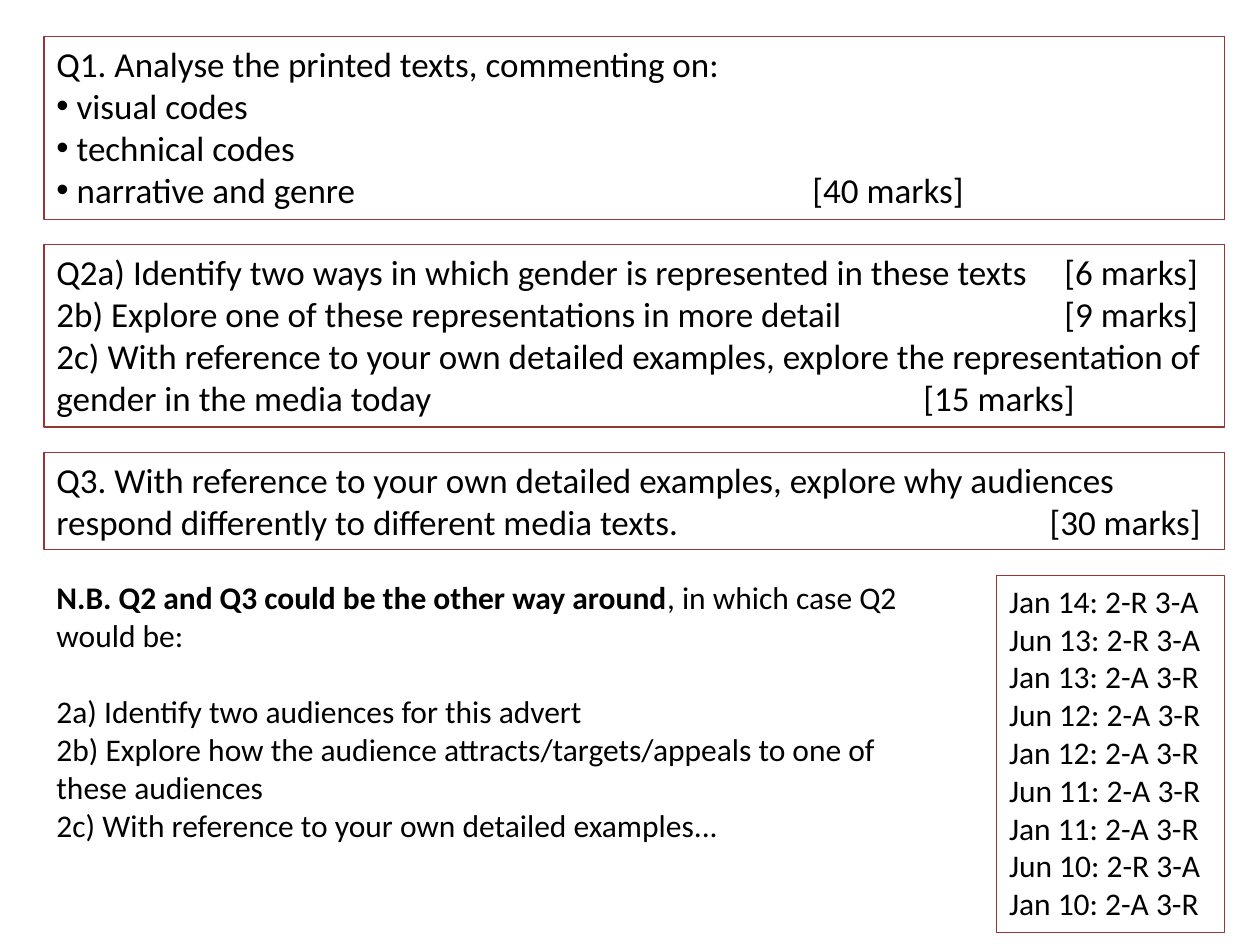
"""Build a slide of exam questions with marks and past paper pattern."""
import lxml.etree
import pptx
import pptx.dml.color
import pptx.enum.shapes
import pptx.enum.text
import pptx.oxml.ns
import pptx.util

Pt = pptx.util.Pt
qn = pptx.oxml.ns.qn
BLACK = pptx.dml.color.RGBColor(0x00, 0x00, 0x00)
DARK_RED = pptx.dml.color.RGBColor(0x95, 0x37, 0x35)

LEFT, WIDTH, GAP = 25.2, 674.6, 14.4
FIRST_TOP = 20.9
QUESTIONS = [
    (104.4, [
        {"runs": ["Q1. Analyse the printed texts, commenting on:"]},
        {"runs": [" visual codes"], "bullet": True},
        {"runs": [" technical codes"], "bullet": True},
        {"runs": [" narrative and genre\t[40 marks]"], "bullet": True, "tab": 432},
    ]),
    (104.4, [
        {"runs": ["Q2a) Identify two ways in which gender is represented in these texts\t[6 marks]"],
         "tab": 576},
        {"runs": ["2b) Explore one of these representations in more detail\t[9 marks]"], "tab": 576},
        {"runs": ["2c) With reference to your own detailed examples, explore the representation of "
                  "gender in the media today\t[15 marks]"], "tab": 495.4},
    ]),
    (55.4, [
        {"runs": ["Q3. With reference to your own detailed examples, explore why audiences respond "
                  "differently to different media texts.\t[30 marks]"], "tab": 567.5},
    ]),
]
NOTE = [
    {"runs": ["N.B. Q2 and Q3 could be the other way around", ", in which case Q2 would be:"],
     "bold_first": True, "space_after": 22},
    {"runs": ["2a) Identify two audiences for this advert"]},
    {"runs": ["2b) Explore how the audience attracts/targets/appeals to one of these audiences"]},
    {"runs": ["2c) With reference to your own detailed examples..."]},
]
PAST_PAPERS = [
    ("Jan 14", "2-R 3-A"), ("Jun 13", "2-R 3-A"), ("Jan 13", "2-A 3-R"),
    ("Jun 12", "2-A 3-R"), ("Jan 12", "2-A 3-R"), ("Jun 11", "2-A 3-R"),
    ("Jan 11", "2-A 3-R"), ("Jun 10", "2-R 3-A"), ("Jan 10", "2-A 3-R"),
]


class SlideBuilder:
    """Hold the text style and the current slide."""

    font = "Calibri"

    def __init__(self, slide):
        self.slide = slide

    def framed_box(self, left, top, width, height, paragraphs, size):
        """Add an outlined rectangle with text."""
        shape = self.slide.shapes.add_shape(
            pptx.enum.shapes.MSO_SHAPE.RECTANGLE, Pt(left), Pt(top), Pt(width), Pt(height))
        shape.shadow.inherit = False
        shape.fill.background()
        shape.line.color.rgb = DARK_RED
        shape.line.width = Pt(0.75)
        self.fill_text(shape, paragraphs, size)

    def text_box(self, left, top, width, height, paragraphs, size):
        """Add a plain text box."""
        shape = self.slide.shapes.add_textbox(Pt(left), Pt(top), Pt(width), Pt(height))
        self.fill_text(shape, paragraphs, size)

    def fill_text(self, shape, paragraphs, size):
        """Fill a shape with paragraphs."""
        frame = shape.text_frame
        frame.word_wrap = True
        frame.auto_size = pptx.enum.text.MSO_AUTO_SIZE.SHAPE_TO_FIT_TEXT
        frame.vertical_anchor = pptx.enum.text.MSO_ANCHOR.TOP
        for index, content in enumerate(paragraphs):
            paragraph = frame.add_paragraph() if index else frame.paragraphs[0]
            self.format_paragraph(paragraph, content)
            for position, text in enumerate(content["runs"]):
                run = paragraph.add_run()
                run.text = text
                run.font.name = self.font
                run.font.size = Pt(size)
                run.font.color.rgb = BLACK
                run.font.bold = position == 0 and content.get("bold_first", False)

    def format_paragraph(self, paragraph, content):
        """Set alignment, spacing, bullet and tab stop."""
        paragraph.alignment = pptx.enum.text.PP_ALIGN.LEFT
        paragraph.space_after = Pt(content.get("space_after", 0))
        properties = paragraph._p.get_or_add_pPr()
        if content.get("bullet"):
            lxml.etree.SubElement(properties, qn("a:buFont"), typeface="Arial")
            lxml.etree.SubElement(properties, qn("a:buChar"), char="•")
        if "tab" in content:
            tabs = lxml.etree.SubElement(properties, qn("a:tabLst"))
            lxml.etree.SubElement(tabs, qn("a:tab"), pos=str(Pt(content["tab"])), algn="l")


def main():
    """Build and save the presentation."""
    presentation = pptx.Presentation()
    presentation.slide_width = Pt(720)
    presentation.slide_height = Pt(540)
    builder = SlideBuilder(presentation.slides.add_slide(presentation.slide_layouts[6]))

    top = FIRST_TOP
    for height, paragraphs in QUESTIONS:
        builder.framed_box(LEFT, top, WIDTH, height, paragraphs, 20)
        top += height + GAP

    builder.text_box(LEFT, 326.9, 521.3, 159.8, NOTE, 18)
    papers = [{"runs": [f"{session}: {pattern}"]} for session, pattern in PAST_PAPERS]
    builder.framed_box(569.5, 329, 130.3, 203.8, papers, 18)
    presentation.save("out.pptx")


if __name__ == "__main__":
    main()
